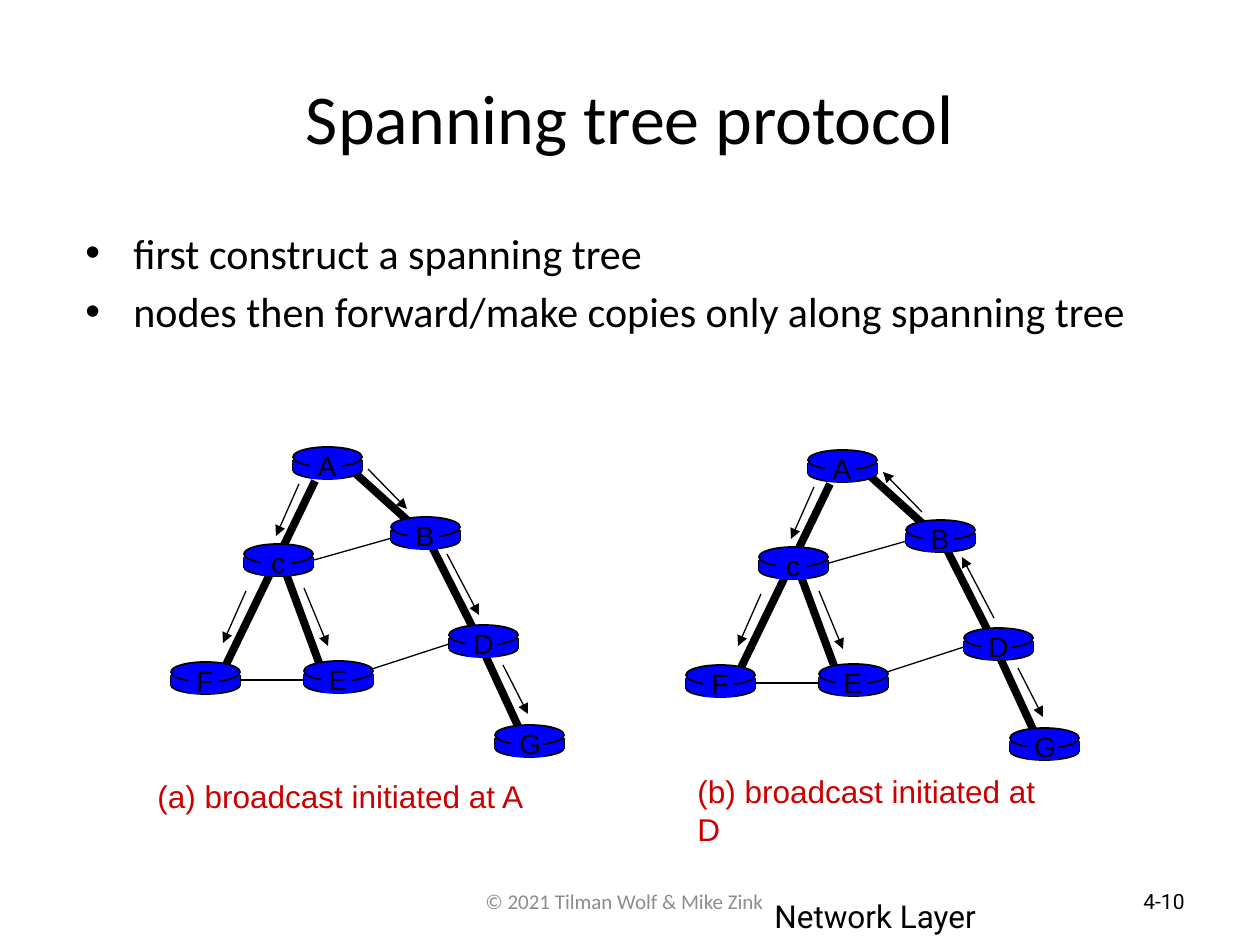
from lxml import etree
from pptx import Presentation
from pptx.dml.color import RGBColor
from pptx.enum.shapes import MSO_CONNECTOR, MSO_SHAPE
from pptx.enum.text import MSO_ANCHOR, MSO_AUTO_SIZE, PP_ALIGN
from pptx.oxml.ns import qn
from pptx.util import Emu, Pt

ELLIPSE, RECT = MSO_SHAPE.OVAL, MSO_SHAPE.RECTANGLE
STRAIGHT = MSO_CONNECTOR.STRAIGHT
LEFT, CENTER, RIGHT = PP_ALIGN.LEFT, PP_ALIGN.CENTER, PP_ALIGN.RIGHT
TOP, MIDDLE = MSO_ANCHOR.TOP, MSO_ANCHOR.MIDDLE
GROW = MSO_AUTO_SIZE.SHAPE_TO_FIT_TEXT

PX_PER_INCH = 126
BLACK, BLUE, RED, GRAY = "000000", "0000FF", "CC0000", "8C8C8C"
THICK, THIN, OUTLINE = 4.5, 0.75, 1


def px(length):
    return Emu(round(length * 914400 / PX_PER_INCH))


def rgb(color):
    return RGBColor.from_string(color)


class Canvas:
    """Holds the current slide and the style of its elements."""

    def __init__(self, slide):
        self.slide = slide
        self.shapes = slide.shapes

    def style(self, paragraph, size, font, color, align):
        paragraph.alignment = align
        paragraph.font.size = Pt(size)
        paragraph.font.name = font
        paragraph.font.color.rgb = rgb(color)

    def title(self, text, x, y, w, h):
        title = self.shapes.title
        title.left, title.top, title.width, title.height = map(px, (x, y, w, h))
        title.text_frame.text = text
        title.text_frame.vertical_anchor = MIDDLE
        self.style(title.text_frame.paragraphs[0], 40, "Calibri", BLACK, CENTER)

    def text(self, text, x, y, w, h, size, font="Arial", color=BLACK,
             align=LEFT, anchor=TOP, wrap=False):
        frame = self.shapes.add_textbox(*map(px, (x, y, w, h))).text_frame
        frame.text = text
        frame.word_wrap = wrap
        frame.vertical_anchor = anchor
        if not wrap:
            frame.auto_size = GROW
        for paragraph in frame.paragraphs:
            self.style(paragraph, size, font, color, align)
        return frame

    def bullets(self, items, x, y, w, h):
        frame = self.text("\n".join(items), x, y, w, h, 24, "Calibri", wrap=True)
        for paragraph in frame.paragraphs:
            paragraph.space_before = Pt(4.8)
            properties = paragraph._p.get_or_add_pPr()
            properties.set("marL", str(px(48)))
            properties.set("indent", str(-px(48)))
            etree.SubElement(properties, qn("a:buFont"), typeface="Arial")
            etree.SubElement(properties, qn("a:buChar"), char="•")

    def shape(self, kind, x, y, w, h, outlined=False):
        shape = self.shapes.add_shape(kind, *map(px, (x, y, w, h)))
        shape.shadow.inherit = False
        shape.fill.solid()
        shape.fill.fore_color.rgb = rgb(BLUE)
        if outlined:
            shape.line.color.rgb = rgb(BLACK)
            shape.line.width = Pt(OUTLINE)
        else:
            shape.line.fill.background()

    def line(self, x1, y1, x2, y2, width, arrow_end=None):
        line = self.shapes.add_connector(STRAIGHT, *map(px, (x1, y1, x2, y2)))
        line.line.color.rgb = rgb(BLACK)
        line.line.width = Pt(width)
        if arrow_end:
            etree.SubElement(line.line._get_or_add_ln(), qn(arrow_end), type="triangle")
        etree.SubElement(line._element.spPr, qn("a:effectLst"))

    def router(self, name, x, y):
        self.shape(ELLIPSE, x, y + 14, 69, 18, outlined=True)
        for side in (x, x + 69):
            self.line(side, y + 13, side, y + 24, OUTLINE)
        self.shape(RECT, x, y + 13, 69, 11)
        self.shape(ELLIPSE, x, y, 69, 20, outlined=True)
        self.shape(RECT, x + 17, y + 3, 31, 29)
        self.text(name, x + 12, y - 5, 44, 47, 16, align=CENTER)


ROUTERS = {
    "A": (293, 447), "B": (391, 517), "G": (495, 725), "D": (449, 625),
    "E": (304, 661), "c": (244, 544), "F": (171, 662),
}
TREE_LINKS = [
    (427, 537, 474, 630), (475, 633, 523, 737), (321, 668, 284, 568),
    (355, 473, 417, 529), (315, 481, 222, 673),
]
OTHER_LINKS = [(452, 643, 369, 670), (325, 680, 223, 680), (307, 562, 399, 536)]
# Message steps, each pointing away from A
STEPS = {
    "A-c": (299, 484, 276, 536), "c-F": (246, 591, 223, 643),
    "A-B": (368, 469, 407, 509), "B-D": (447, 554, 479, 615),
    "D-G": (503, 665, 528, 714), "c-E": (304, 588, 328, 646),
}


def draw_network(canvas, dx, dy, reversed_steps=()):
    def moved(ends):
        x1, y1, x2, y2 = ends
        return x1 + dx, y1 + dy, x2 + dx, y2 + dy

    for links, width in ((TREE_LINKS, THICK), (OTHER_LINKS, THIN)):
        for link in links:
            canvas.line(*moved(link), width)
    for name, (x, y) in ROUTERS.items():
        canvas.router(name, x + dx, y + dy)
    for step, ends in STEPS.items():
        arrow_end = "a:headEnd" if step in reversed_steps else "a:tailEnd"
        canvas.line(*moved(ends), THIN, arrow_end)


def main():
    deck = Presentation()
    deck.slide_width, deck.slide_height = px(1260), px(945)
    canvas = Canvas(deck.slides.add_slide(deck.slide_layouts[5]))

    # Title and bullets
    canvas.title("Spanning tree protocol", 63, 38, 1134, 158)
    canvas.bullets(["first construct a spanning tree",
                    "nodes then forward/make copies only along spanning tree"],
                   73, 221, 1071, 256)

    # Broadcast from A, and the same network with the path D-B-A reversed
    draw_network(canvas, 0, 0)
    draw_network(canvas, 515, 3, reversed_steps=("A-B", "B-D"))
    canvas.text("(a) broadcast initiated at A", 145, 771, 393, 50, 18, color=RED)
    canvas.text("(b) broadcast initiated at D", 685, 766, 394, 50, 18, color=RED)

    # Footer
    canvas.text("© 2021 Tilman Wolf & Mike Zink", 473, 882, 307, 63, 12, "Calibri", GRAY)
    canvas.text("Network Layer", 762, 891, 399, 39, 18, "Roboto", wrap=True)
    canvas.text("4-10", 903, 876, 294, 50, 12, "Roboto",
                align=RIGHT, anchor=MIDDLE, wrap=True)

    deck.save("out.pptx")


if __name__ == "__main__":
    main()
